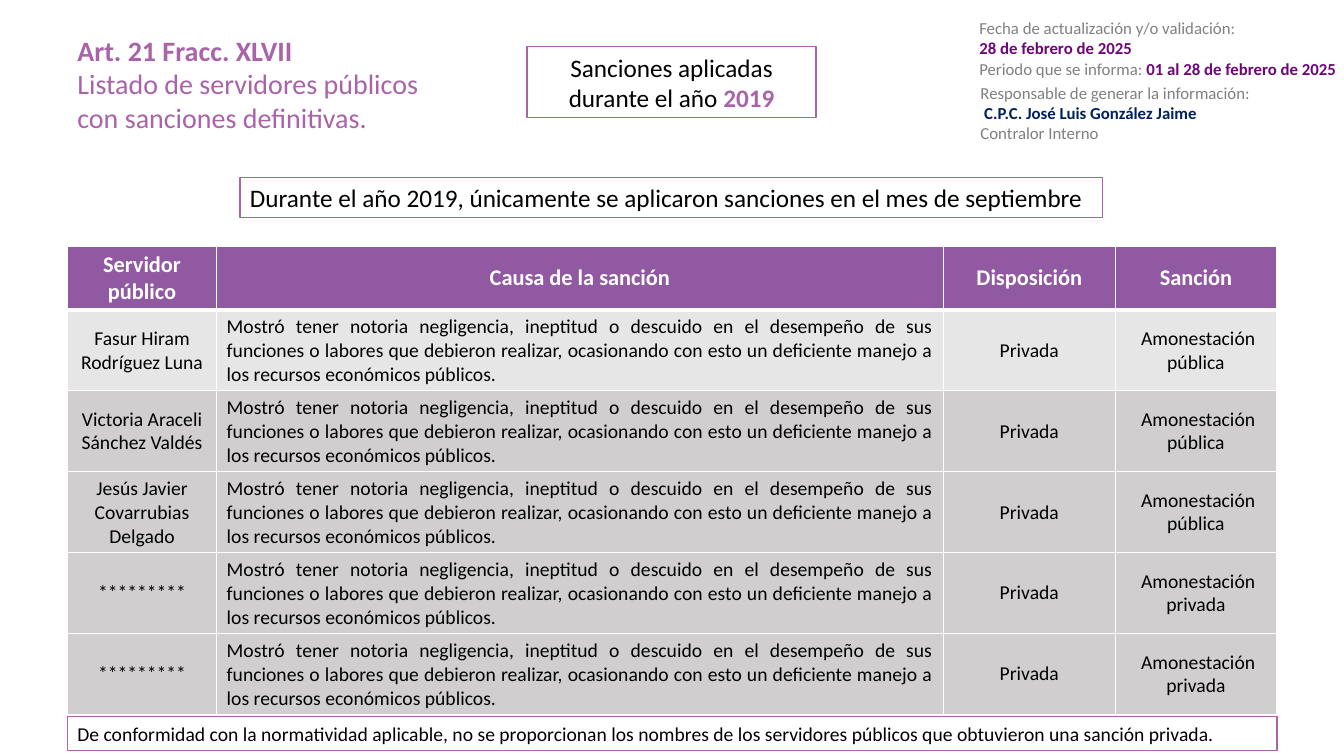
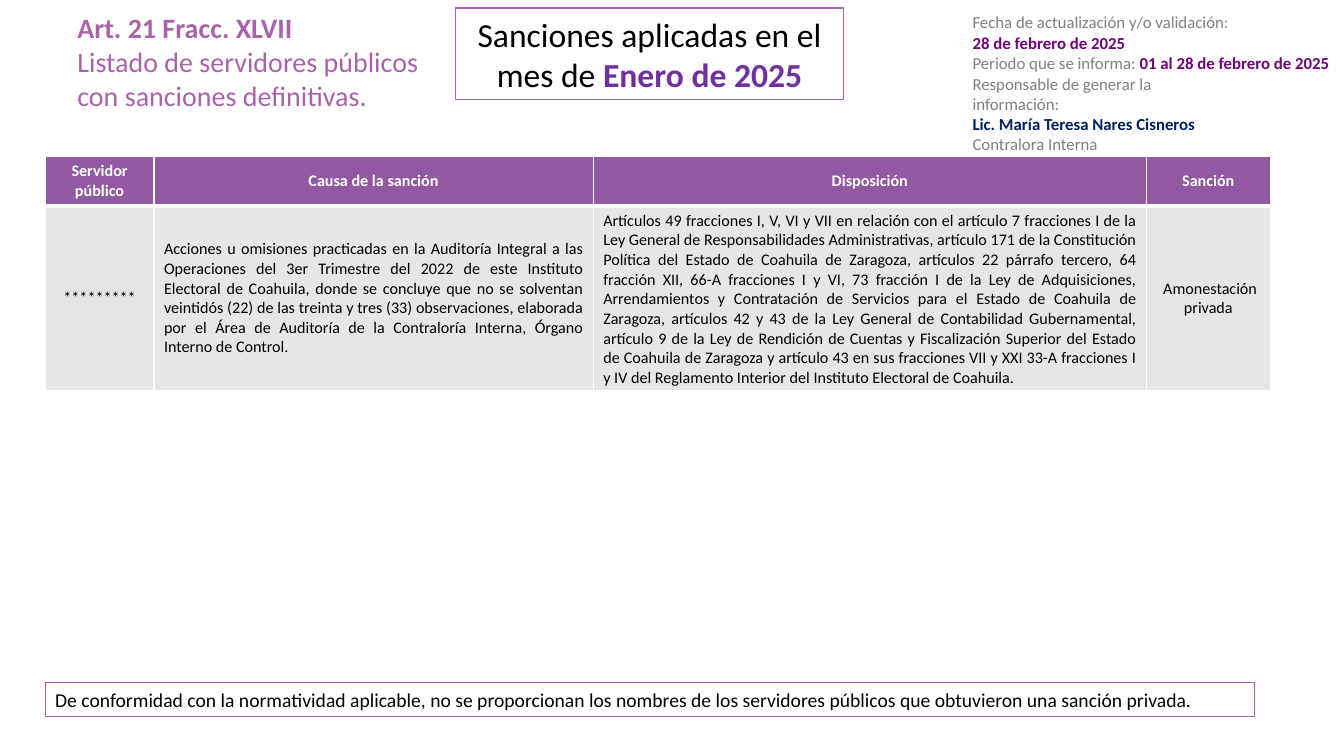
from lxml.etree import SubElement
from pptx import Presentation
from pptx.dml.color import RGBColor
from pptx.enum.shapes import MSO_SHAPE as Preset
from pptx.enum.text import MSO_ANCHOR as Anchor, PP_ALIGN as Align
from pptx.oxml.ns import qn
from pptx.util import Cm, Pt

FONT = "Calibri"
BLACK = "000000"
WHITE = "FFFFFF"
PURPLE = "A963A9"
HEADER = "9059A1"
GRAY = "808080"
DATE = "6F0579"
NAVY = "002060"
LIGHT = "E7E6E6"
DARK = "D0CECE"

COLUMNS = ["Servidor público", "Causa de la sanción", "Disposición", "Sanción"]
NOTE = (
    "De conformidad con la normatividad aplicable, no se proporcionan los nombres "
    "de los servidores públicos que obtuvieron una sanción privada."
)
HIDDEN_NAME = "*********"
PUBLIC = " Amonestación pública"
PRIVATE = " Amonestación privada"
NEGLIGENCE = (
    "Mostró tener notoria negligencia, ineptitud o descuido en el desempeño de sus "
    "funciones o labores que debieron realizar, ocasionando con esto un deficiente "
    "manejo a los recursos económicos públicos."
)
AUDIT = (
    "Acciones u omisiones practicadas en la Auditoría Integral a las Operaciones del "
    "3er Trimestre del 2022 de este Instituto Electoral de Coahuila, donde se concluye "
    "que no se solventan veintidós (22) de las treinta y tres (33) observaciones, "
    "elaborada por el Área de Auditoría de la Contraloría Interna, Órgano Interno de "
    "Control."
)
ARTICLES = (
    "Artículos 49 fracciones I, V, VI y VII en relación con el artículo 7 fracciones I "
    "de la Ley General de Responsabilidades Administrativas, artículo 171 de la "
    "Constitución Política del Estado de Coahuila de Zaragoza, artículos 22 párrafo "
    "tercero, 64 fracción XII, 66-A fracciones I y VI, 73 fracción I de la Ley de "
    "Adquisiciones, Arrendamientos y Contratación de Servicios para el Estado de "
    "Coahuila de Zaragoza, artículos 42 y 43 de la Ley General de Contabilidad "
    "Gubernamental, artículo 9 de la Ley de Rendición de Cuentas y Fiscalización "
    "Superior del Estado de Coahuila de Zaragoza y artículo 43 en sus fracciones VII y "
    "XXI 33-A fracciones I y IV del Reglamento Interior del Instituto Electoral de "
    "Coahuila."
)


def color(value):
    return RGBColor.from_string(value)


class Deck:
    def __init__(self):
        self.presentation = Presentation()
        self.presentation.slide_width = Cm(33.87)
        self.presentation.slide_height = Cm(19.05)
        self.slide = None

    def new_slide(self):
        self.slide = self.presentation.slides.add_slide(self.presentation.slide_layouts[6])

    def style(self, font, ink, bold):
        font.color.rgb = color(ink)
        font.bold = bold

    def fill_text(self, frame, lines, size, align=Align.LEFT):
        frame.word_wrap = True
        for index, runs in enumerate(lines):
            paragraph = frame.paragraphs[0] if index == 0 else frame.add_paragraph()
            paragraph.alignment = align
            paragraph.font.name = FONT
            paragraph.font.size = Pt(size)
            for text, ink, bold in runs:
                run = paragraph.add_run()
                run.text = text
                target = paragraph if len(runs) == 1 else run
                self.style(target.font, ink, bold)

    def text(self, left, top, width, height, lines, size):
        box = self.slide.shapes.add_textbox(Cm(left), Cm(top), Cm(width), Cm(height))
        self.fill_text(box.text_frame, lines, size)

    def frame(self, left, top, width, height, runs, size, align=Align.LEFT):
        shape = self.slide.shapes.add_shape(
            Preset.RECTANGLE, Cm(left), Cm(top), Cm(width), Cm(height)
        )
        shape.shadow.inherit = False
        shape.fill.solid()
        shape.fill.fore_color.rgb = color(WHITE)
        shape.line.color.rgb = color(PURPLE)
        shape.line.width = Pt(1)
        shape.text_frame.vertical_anchor = Anchor.MIDDLE
        self.fill_text(shape.text_frame, [runs], size, align)

    def title(self, top):
        lines = [
            [("Art. 21 Fracc. XLVII", PURPLE, True)],
            [("Listado de servidores públicos con sanciones definitivas.", PURPLE, False)],
        ]
        self.text(1.7, top, 9.78, 3.68, lines, 20)

    def note(self, left, top):
        self.frame(left, top, 30.48, 0.86, [(NOTE, BLACK, False)], 14)

    def update_dates(self, left, top):
        lines = [
            [("Fecha de actualización y/o validación:", GRAY, False)],
            [("28 de febrero de 2025", DATE, True)],
            [
                ("Periodo que se informa: ", GRAY, False),
                ("01 al 28 de febrero de 2025", DATE, True),
            ],
        ]
        self.text(left, top, 9.65, 1.8, lines, 12)

    def responsible(self, left, top, width, name, post):
        lines = [
            [("Responsable de generar la información:", GRAY, False)],
            [(name, NAVY, True)],
            [(post, GRAY, False)],
        ]
        self.text(left, top, width, 1.8, lines, 12)

    def border(self, cell, bottom):
        properties = cell._tc.get_or_add_tcPr()
        sides = {"lnL": 1, "lnR": 1, "lnT": 1, "lnB": bottom}
        for index, (side, width) in enumerate(sides.items()):
            line = SubElement(properties, qn(f"a:{side}"), w=str(Pt(width)))
            fill = SubElement(line, qn("a:solidFill"))
            SubElement(fill, qn("a:srgbClr"), val=WHITE)
            properties.remove(line)
            properties.insert(index, line)

    def cell(self, cell, text, size, align, fill, ink=BLACK, bold=False, bottom=1):
        cell.fill.solid()
        cell.fill.fore_color.rgb = color(fill)
        cell.vertical_anchor = Anchor.MIDDLE
        self.border(cell, bottom)
        self.fill_text(cell.text_frame, [[(text, ink, bold)]], size, align)

    def table(self, left, top, widths, heights, rows, sizes, justified):
        header_height, row_height = heights
        header_size, body_size = sizes
        total_height = header_height + row_height * len(rows)
        table = self.slide.shapes.add_table(
            len(rows) + 1, len(widths), Cm(left), Cm(top), Cm(sum(widths)), Cm(total_height)
        ).table
        table.horz_banding = False
        for column, width in zip(table.columns, widths):
            column.width = Cm(width)
        for index, row in enumerate(table.rows):
            row.height = Cm(row_height if index else header_height)
        for cell, text in zip(table.rows[0].cells, COLUMNS):
            self.cell(cell, text, header_size, Align.CENTER, HEADER, WHITE, True, 3)
        for index, values in enumerate(rows, 1):
            fill = LIGHT if index == 1 else DARK
            for column, text in enumerate(values):
                align = Align.JUSTIFY if column in justified else Align.CENTER
                self.cell(table.cell(index, column), text, body_size, align, fill)


def year_slide(deck):
    deck.new_slide()
    deck.title(0.71)
    sanctions = [
        ("Fasur Hiram Rodríguez Luna", PUBLIC),
        ("Victoria Araceli Sánchez Valdés", PUBLIC),
        ("Jesús Javier Covarrubias Delgado", PUBLIC),
        (HIDDEN_NAME, PRIVATE),
        (HIDDEN_NAME, PRIVATE),
    ]
    rows = [(name, NEGLIGENCE, "Privada", sanction) for name, sanction in sanctions]
    deck.table(1.7, 6.2, [3.76, 18.31, 4.34, 4.06], (1.57, 2.04), rows, (16, 14), {1})
    summary = "Durante el año 2019, únicamente se aplicaron sanciones en el mes de septiembre"
    deck.frame(6.05, 4.47, 21.74, 1.02, [(summary, BLACK, False)], 18)
    deck.note(1.7, 18.06)
    heading = [("Sanciones aplicadas durante el año ", BLACK, False), ("2019", PURPLE, True)]
    deck.frame(13.28, 1.17, 7.29, 1.8, heading, 18, Align.CENTER)
    deck.update_dates(24.43, 0.33)
    deck.responsible(
        24.46, 1.96, 7.9, " C.P.C. José Luis González Jaime", "Contralor Interno"
    )


def month_slide(deck):
    deck.new_slide()
    deck.title(0.15)
    deck.note(1.14, 17.2)
    rows = [(HIDDEN_NAME, AUDIT, ARTICLES, PRIVATE)]
    deck.table(
        1.14, 3.94, [2.74, 11.07, 13.94, 3.12], (1.25, 4.66), rows, (11.5, 11.5), {1, 2}
    )
    heading = [
        ("Sanciones aplicadas en el mes de ", BLACK, False),
        ("Enero de 2025", "7030A0", True),
    ]
    deck.frame(11.48, 0.2, 9.78, 2.31, heading, 24, Align.CENTER)
    deck.update_dates(24.26, 0.18)
    deck.responsible(
        24.26, 1.73, 6.73, "Lic. María Teresa Nares Cisneros", "Contralora Interna"
    )


def main():
    deck = Deck()
    year_slide(deck)
    month_slide(deck)
    deck.presentation.save("out.pptx")


if __name__ == "__main__":
    main()
